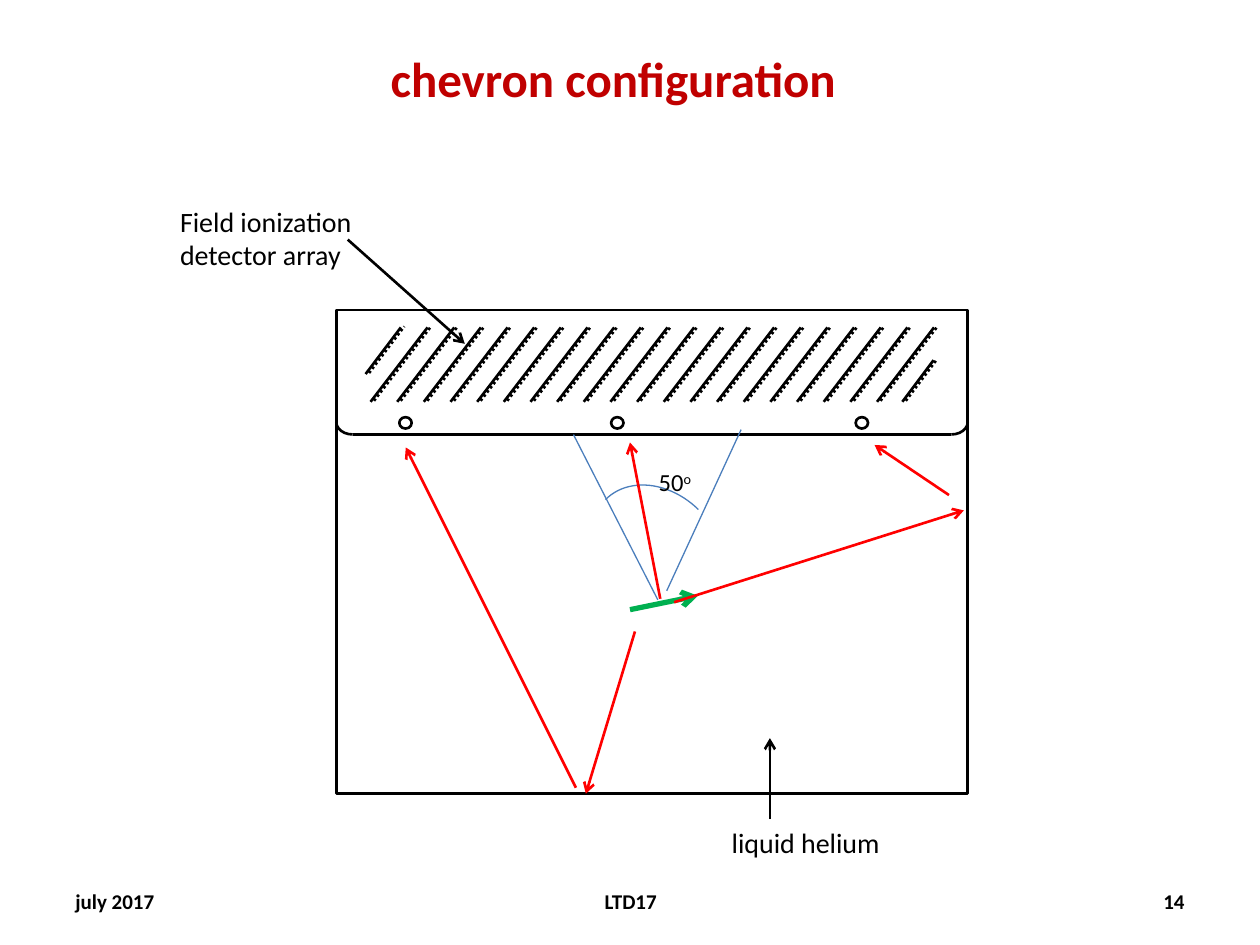
import dataclasses

import lxml.etree
import pptx
import pptx.dml.color
import pptx.enum.dml
import pptx.enum.shapes
import pptx.enum.text
import pptx.oxml.ns
import pptx.util

Cm = pptx.util.Cm
Pt = pptx.util.Pt
qn = pptx.oxml.ns.qn
RGBColor = pptx.dml.color.RGBColor
MSO_SHAPE = pptx.enum.shapes.MSO_SHAPE
PP_ALIGN = pptx.enum.text.PP_ALIGN
MSO_ANCHOR = pptx.enum.text.MSO_ANCHOR


@dataclasses.dataclass(frozen=True)
class Theme:
    font: str = "Calibri"
    black: RGBColor = RGBColor(0x00, 0x00, 0x00)
    title: RGBColor = RGBColor(0xC0, 0x00, 0x00)
    red: RGBColor = RGBColor(0xFF, 0x00, 0x00)
    green: RGBColor = RGBColor(0x00, 0xB0, 0x50)
    blue: RGBColor = RGBColor(0x4B, 0x7E, 0xBC)
    title_size: int = 28
    label_size: int = 16
    angle_size: int = 14
    footer_size: int = 12
    thin: float = 0.75
    normal: float = 1.5
    thick: float = 3


theme = Theme()


def draw_line(shapes, points, colour=theme.black, width=theme.normal, arrow=False, dash=None):
    connector = shapes.add_connector(
        pptx.enum.shapes.MSO_CONNECTOR.STRAIGHT, *[Cm(value) for value in points]
    )
    connector.line.color.rgb = colour
    connector.line.width = Pt(width)
    if dash:
        connector.line.dash_style = dash
    properties = connector.element.spPr
    if arrow:
        lxml.etree.SubElement(properties.get_or_add_ln(), qn("a:tailEnd"), type="arrow")
    lxml.etree.SubElement(properties, qn("a:effectLst"))


def write_text(shape, text, size, colour=theme.black, bold=False, align=PP_ALIGN.LEFT,
               anchor=MSO_ANCHOR.TOP, wrap=True):
    frame = shape.text_frame
    frame.text = text
    frame.word_wrap = wrap
    frame.auto_size = pptx.enum.text.MSO_AUTO_SIZE.NONE
    frame.vertical_anchor = anchor
    paragraph = frame.paragraphs[0]
    paragraph.alignment = align
    font = paragraph.runs[0].font
    font.name, font.size, font.bold = theme.font, Pt(size), bold
    font.color.rgb = colour
    return paragraph


presentation = pptx.Presentation()
presentation.slide_width = Cm(25.4)
presentation.slide_height = Cm(19.05)
slide = presentation.slides.add_slide(presentation.slide_layouts[5])

title = slide.shapes.title
title.left, title.top, title.width, title.height = Cm(7.62), Cm(0.86), Cm(9.6), Cm(1.44)
write_text(title, "chevron configuration", theme.title_size, theme.title, bold=True, wrap=False)

for text, left, top, width, height in [
    ("Field ionization detector array", 3.38, 3.99, 5.11, 1.63),
    ("liquid helium", 14.5, 16.51, 4.11, 0.94),
]:
    label = slide.shapes.add_textbox(Cm(left), Cm(top), Cm(width), Cm(height))
    write_text(label, text, theme.label_size)

for text, left, width, align in [
    ("july 2017", 1.27, 5.92, PP_ALIGN.LEFT),
    ("LTD17", 8.69, 8.05, PP_ALIGN.CENTER),
    ("14", 18.21, 5.92, PP_ALIGN.RIGHT),
]:
    footer = slide.shapes.add_textbox(Cm(left), Cm(17.65), Cm(width), Cm(1.02))
    write_text(footer, text, theme.footer_size, bold=True, align=align, anchor=MSO_ANCHOR.MIDDLE)

chevron_count = 20
first_chevron, last_chevron = 7.47, 17.68
pitch = (last_chevron - first_chevron) / (chevron_count - 1)
chevrons = [
    (first_chevron + index * pitch, 8.1, first_chevron + index * pitch + 1.15, 6.6)
    for index in range(chevron_count)
]
chevrons += [(18.19, 8.1, 18.82, 7.26), (7.37, 7.54, 8.08, 6.6)]
for shift_x, shift_y, dash in [
    (0, 0, None),
    (0.07, -0.02, pptx.enum.dml.MSO_LINE.ROUND_DOT),
]:
    detector_array = slide.shapes.add_group_shape()
    for x1, y1, x2, y2 in chevrons:
        points = (x1 + shift_x, y1 + shift_y, x2 + shift_x, y2 + shift_y)
        draw_line(detector_array.shapes, points, dash=dash)

ring = MSO_SHAPE.FLOWCHART_CONNECTOR
for kind, left, top, width, height, flips, rotation, colour, weight in [
    (MSO_SHAPE.RECTANGLE, 6.78, 6.25, 12.73, 9.75, [], 0, theme.black, theme.normal),
    (MSO_SHAPE.ARC, 6.78, 8.26, 0.66, 0.5, ["flipH", "flipV"], 0, theme.black, theme.normal),
    (MSO_SHAPE.ARC, 18.85, 8.26, 0.66, 0.5, ["flipV"], 0, theme.black, theme.normal),
    (ring, 8.05, 8.41, 0.25, 0.23, [], 0, theme.black, theme.normal),
    (ring, 12.32, 8.41, 0.25, 0.23, [], 0, theme.black, theme.normal),
    (ring, 17.25, 8.41, 0.25, 0.23, [], 0, theme.black, theme.normal),
    (MSO_SHAPE.ARC, 12.09, 9.63, 2.34, 2.95, [], 314.5, theme.blue, theme.thin),
]:
    shape = slide.shapes.add_shape(kind, Cm(left), Cm(top), Cm(width), Cm(height))
    shape.shadow.inherit = False
    shape.fill.background()
    shape.line.color.rgb = colour
    shape.line.width = Pt(weight)
    shape.rotation = rotation
    for flip in flips:
        shape.element.spPr.xfrm.set(flip, "1")

draw_line(slide.shapes, (7.11, 8.76, 19.18, 8.76))

for points in [(13.26, 12.09, 11.56, 8.76), (13.44, 11.91, 14.94, 8.66)]:
    draw_line(slide.shapes, points, theme.blue, theme.thin)

for points, colour, width in [
    ((12.7, 12.29, 14.07, 12.01), theme.green, theme.thick),
    ((11.61, 15.88, 8.18, 9.02), theme.red, theme.normal),
    ((13.31, 12.07, 12.7, 8.92), theme.red, theme.normal),
    ((12.8, 12.73, 11.81, 16), theme.red, theme.normal),
    ((13.59, 12.14, 19.43, 10.29), theme.red, theme.normal),
    ((19.13, 9.98, 17.63, 8.97), theme.red, theme.normal),
    ((15.52, 16.51, 15.52, 14.88), theme.black, theme.normal),
    ((7.01, 4.83, 9.37, 6.93), theme.black, theme.normal),
]:
    draw_line(slide.shapes, points, colour, width, arrow=True)

angle = slide.shapes.add_textbox(Cm(13.03), Cm(9.3), Cm(1.32), Cm(0.86))
paragraph = write_text(angle, "50", theme.angle_size, wrap=False)
degree = paragraph.add_run()
degree.text = "o"
degree.font.name, degree.font.size = theme.font, Pt(theme.angle_size)
degree.font.color.rgb = theme.black
degree.font._element.set("baseline", "30000")

presentation.save("out.pptx")
